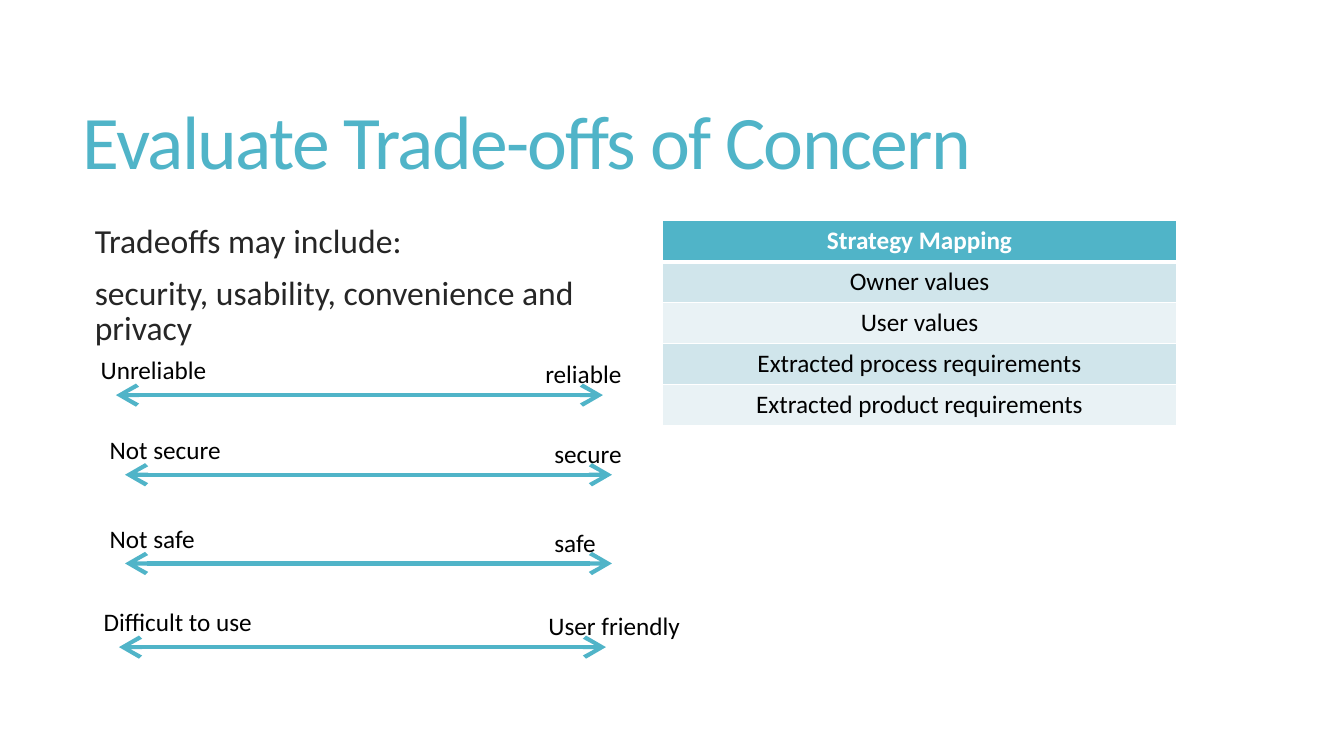
from lxml.etree import SubElement
from pptx import Presentation
from pptx.dml.color import RGBColor
from pptx.enum.shapes import MSO_CONNECTOR
from pptx.enum.text import MSO_ANCHOR, MSO_AUTO_SIZE as FIT, PP_ALIGN as ALIGN
from pptx.oxml.ns import qn
from pptx.util import Inches, Pt

TRADEOFFS = [
    (1.15, 3.92, "Unreliable", "reliable", 1.0),
    (1.24, 4.71, "Not secure", "secure", 0.9),
    (1.24, 5.59, "Not safe", "safe", 0.65),
    (1.18, 6.42, "Difficult to use", "User friendly", 1.55),
]
MAPPING = ["Strategy Mapping", "Owner values", "User values",
           "Extracted process requirements", "Extracted product requirements"]


def rgb(value):
    """Turn a hex string into a colour."""
    return RGBColor.from_string(value)


def write(p, text, size=18, color="000000", bold=False, align=ALIGN.LEFT,
          line=None, before=None, spc=None):
    """Write one formatted run into a paragraph."""
    p.alignment = align
    if line is not None:
        p.line_spacing = line
    if before is not None:
        p.space_before = Pt(before)
    r = p.add_run()
    r.text = text
    f = r.font
    f.name, f.size, f.bold = "Calibri", Pt(size), bold
    f.color.rgb = rgb(color)
    if spc is not None:
        r._r.get_or_add_rPr().set("spc", str(spc))


class TradeoffSlide:
    """Hold the style and the current slide."""

    accent, ink, white = "50B4C8", "262626", "FFFFFF"
    bands = ["E9F2F5", "D0E5EB"]

    def __init__(self, prs):
        """Add a title and content slide."""
        self.s = prs.slides.add_slide(prs.slide_layouts[1])

    def place(self, sp, x, y, w, h, anchor):
        """Move a placeholder and return its text frame."""
        sp.left, sp.top, sp.width, sp.height = map(Inches, (x, y, w, h))
        tf = sp.text_frame
        tf.word_wrap, tf.auto_size, tf.vertical_anchor = True, FIT.NONE, anchor
        return tf

    def title(self, text, *box):
        """Fill the title."""
        tf = self.place(self.s.shapes.title, *box, MSO_ANCHOR.MIDDLE)
        write(tf.paragraphs[0], text, size=54, color=self.accent, line=0.85, spc=-120)

    def body(self, lines, *box):
        """Fill the body list with blank bullets."""
        tf = self.place(self.s.placeholders[1], *box, MSO_ANCHOR.TOP)
        for i, text in enumerate(lines):
            p = tf.add_paragraph() if i else tf.paragraphs[0]
            write(p, text, size=24, color=self.ink, line=0.85, before=13)
            pPr = p._p.get_or_add_pPr()
            pPr.set("marL", str(Inches(0.1)))
            pPr.set("indent", str(-Inches(0.1)))
            SubElement(pPr, qn("a:buChar"), char=" ")

    def label(self, text, x, y, w, wrap):
        """Add a text label."""
        tf = self.s.shapes.add_textbox(*map(Inches, (x, y, w, 0.4))).text_frame
        tf.word_wrap, tf.auto_size = wrap, FIT.SHAPE_TO_FIT_TEXT
        write(tf.paragraphs[0], text)

    def arrow(self, x, y, w):
        """Add a horizontal double-headed arrow."""
        c = self.s.shapes.add_connector(
            MSO_CONNECTOR.STRAIGHT, *map(Inches, (x, y, x + w, y)))
        c.line.color.rgb, c.line.width = rgb(self.accent), Pt(3)
        ln = c.line._get_or_add_ln()
        for end in ("a:headEnd", "a:tailEnd"):
            SubElement(ln, qn(end), type="arrow", w="lg", len="lg")
        SubElement(c._element.spPr, qn("a:effectLst"))

    def scale(self, x, y, low, high, w):
        """Add an arrow with a label at each end."""
        self.arrow(x, y, 4.83)
        self.label(low, x - 0.25, y - 0.45, 1.7, True)
        self.label(high, x + 4.16, y - 0.41, w, True)

    def borders(self, cell, **widths):
        """Draw white borders on a cell."""
        tcPr = cell._tc.get_or_add_tcPr()
        for side in "LRTB":
            ln = SubElement(tcPr, qn("a:ln" + side), w=str(Pt(widths.get(side, 1))))
            SubElement(SubElement(ln, qn("a:solidFill")), qn("a:srgbClr"), val=self.white)

    def table(self, rows, x, y, w, h):
        """Add a one-column banded table with a header."""
        t = self.s.shapes.add_table(len(rows), 1, *map(Inches, (x, y, w, h))).table
        for i, text in enumerate(rows):
            cell, head = t.cell(i, 0), i == 0
            self.borders(cell, B=3 if head else 1, T=3 if i == 1 else 1)
            cell.fill.solid()
            cell.fill.fore_color.rgb = rgb(self.accent if head else self.bands[i % 2])
            write(cell.text_frame.paragraphs[0], text, bold=head, align=ALIGN.CENTER,
                  color=self.white if head else "000000")


def main():
    """Build and save the slide."""
    prs = Presentation()
    prs.slide_width, prs.slide_height = Inches(13.33), Inches(7.5)
    slide = TradeoffSlide(prs)
    slide.title("Evaluate Trade-offs of Concern", 0.72, 0.55, 11.78, 1.81)
    slide.body(["Tradeoffs may include:", "security, usability, convenience and privacy"],
               0.74, 2.19, 5.1, 4.12)
    slide.table(MAPPING, 6.57, 2.19, 5.1, 2.03)
    for tradeoff in TRADEOFFS:
        slide.scale(*tradeoff)
    prs.save("out.pptx")


if __name__ == "__main__":
    main()
